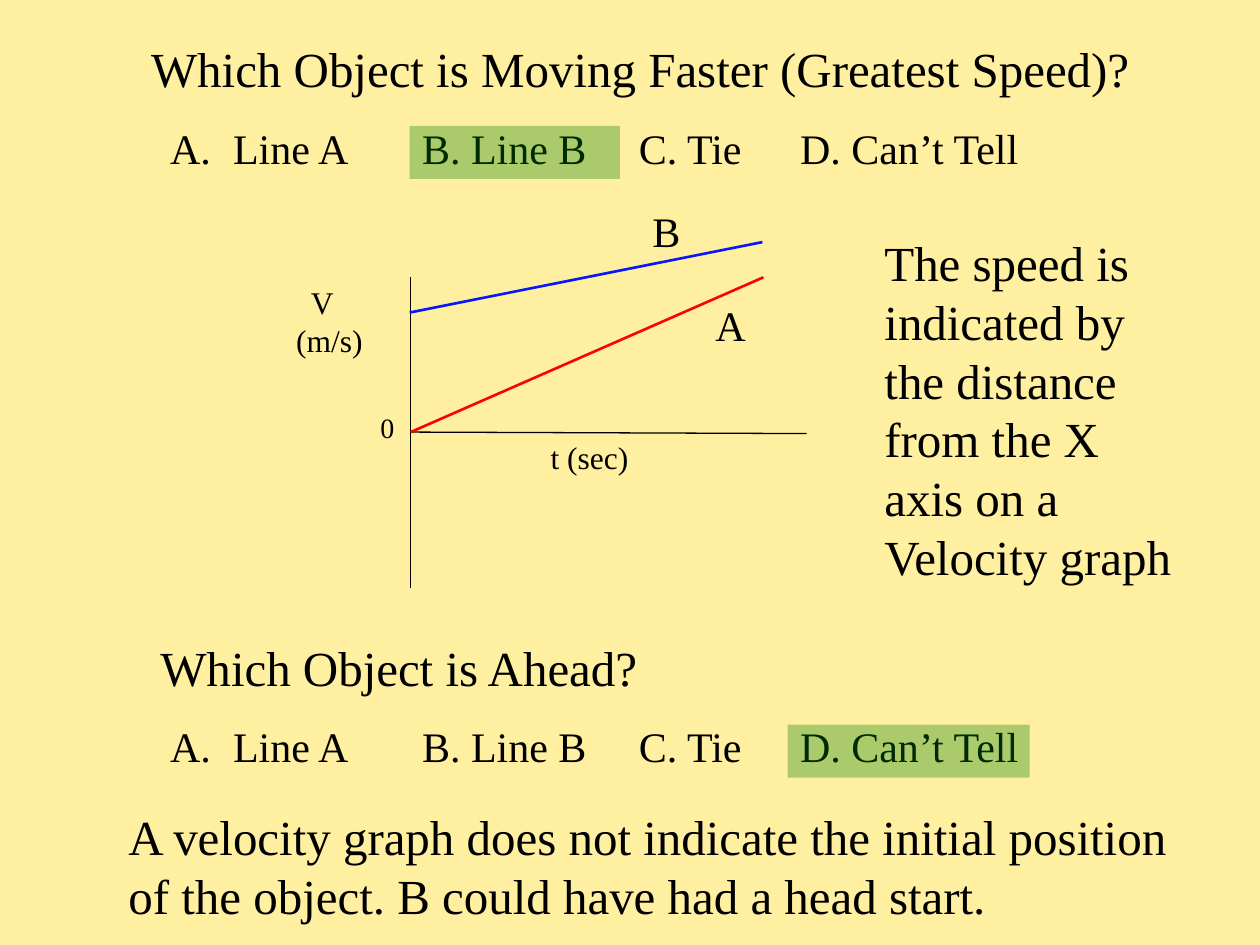
from lxml.etree import SubElement
from pptx import Presentation
from pptx.dml.color import RGBColor
from pptx.enum.shapes import MSO_CONNECTOR as Connector, MSO_SHAPE as Shape
from pptx.enum.text import MSO_ANCHOR as Anchor, PP_ALIGN as Align
from pptx.oxml.ns import qn
from pptx.util import Cm, Pt

COLORS = {
    "background": "FFEFA1",
    "ink": "000000",
    "line_a": "FA0303",
    "line_b": "0718FF",
    "highlight": "008000",
}
FONT = "Times New Roman"
OPTIONS = "A.\tLine A\tB. Line B\tC. Tie\tD. Can’t Tell"
OPTION_STOPS = (1.27, 5.08, 9.45, 12.7)


def color(name):
    """Return the named colour."""
    return RGBColor.from_string(COLORS[name])


def lengths(values):
    """Convert centimetres to slide lengths."""
    return [Cm(value) for value in values]


def write(box, text, size, align=Align.LEFT, anchor=Anchor.TOP, wrap=True):
    """Set and format the text of a box."""
    frame = box.text_frame
    frame.text = text
    frame.word_wrap = wrap
    frame.vertical_anchor = anchor
    for para in frame.paragraphs:
        para.alignment = align
        for span in para.runs:
            span.font.name = FONT
            span.font.size = Pt(size)
            span.font.color.rgb = color("ink")


def add_text(shapes, place, text, size, **style):
    """Add a formatted text box."""
    box = shapes.add_textbox(*lengths(place))
    write(box, text, size, **style)
    return box


def add_title(page, text):
    """Move and format the title placeholder."""
    title = page.shapes.title
    title.left, title.top, title.width, title.height = lengths((2.11, 0.64, 21.59, 1.47))
    write(title, text, 28, align=Align.CENTER, anchor=Anchor.MIDDLE)


def add_options(page, top):
    """Add the row of answers, aligned on tab stops."""
    box = add_text(page.shapes, (3.18, top, 20.12, 1.27), OPTIONS, 24)
    properties = box.text_frame.paragraphs[0]._p.get_or_add_pPr()
    stops = SubElement(properties, qn("a:tabLst"))
    for stop in OPTION_STOPS:
        SubElement(stops, qn("a:tab"), pos=str(Cm(stop)), algn="l")


def add_line(shapes, ends, name, width):
    """Add a straight line without a shadow."""
    line = shapes.add_connector(Connector.STRAIGHT, *lengths(ends))
    line.line.color.rgb = color(name)
    line.line.width = Pt(width)
    SubElement(line._element.spPr, qn("a:effectLst"))


def add_highlight(page, place):
    """Mark the correct answer with a translucent bar."""
    bar = page.shapes.add_shape(Shape.RECTANGLE, *lengths(place))
    bar.shadow.inherit = False
    bar.line.fill.background()
    bar.fill.solid()
    bar.fill.fore_color.rgb = color("highlight")
    tint = bar._element.spPr.find(qn("a:solidFill"))[0]
    SubElement(tint, qn("a:alpha"), val="33000")


def add_axes(page):
    """Add the grouped axes with their labels."""
    shapes = page.shapes.add_group_shape().shapes
    add_line(shapes, (8.28, 5.59, 8.28, 11.86), "ink", 0.75)
    add_line(shapes, (8.28, 8.71, 16.26, 8.74), "ink", 0.75)
    velocity = add_text(shapes, (5.72, 5.59, 2.84, 2.39), "V\n(m/s)", 18)
    symbol = velocity.text_frame.paragraphs[0]._p.get_or_add_pPr()
    symbol.set("marL", str(Cm(0.3)))
    symbol.set("indent", "0")
    add_text(shapes, (10.85, 8.71, 2.79, 1.37), "t (sec)", 18, wrap=False)
    add_text(shapes, (7.42, 8.15, 1.07, 1.27), "0", 16, wrap=False)


def main():
    """Build and save the slide."""
    deck = Presentation()
    deck.slide_width, deck.slide_height = Cm(25.4), Cm(19.05)
    page = deck.slides.add_slide(deck.slide_layouts[5])
    page.background.fill.solid()
    page.background.fill.fore_color.rgb = color("background")

    add_title(page, "Which Object is Moving Faster (Greatest Speed)?")
    add_options(page, 2.34)
    add_text(page.shapes, (14.17, 5.92, 1.52, 1.7), "A", 24, wrap=False)
    add_text(page.shapes, (12.9, 4.01, 1.45, 1.7), "B", 24, wrap=False)
    add_axes(page)
    add_line(page.shapes, (8.28, 8.71, 15.39, 5.59), "line_a", 1.5)
    add_line(page.shapes, (8.26, 6.3, 15.37, 4.88), "line_b", 1.5)

    add_text(page.shapes, (0.84, 12.7, 14.4, 1.47), "Which Object is Ahead?", 28,
             align=Align.CENTER, anchor=Anchor.MIDDLE)
    add_options(page, 14.4)
    add_highlight(page, (8.26, 2.54, 4.24, 1.07))
    add_highlight(page, (15.88, 14.61, 4.88, 1.07))
    add_text(page.shapes, (2.34, 16.71, 22.23, 1.47),
             "A velocity graph does not indicate the initial position of the object. "
             "B could have had a head start.", 28, anchor=Anchor.MIDDLE)
    add_text(page.shapes, (17.58, 4.65, 6.55, 7.19),
             "The speed is indicated by the distance from the X axis on a Velocity graph",
             28, anchor=Anchor.MIDDLE)
    deck.save("out.pptx")


if __name__ == "__main__":
    main()
